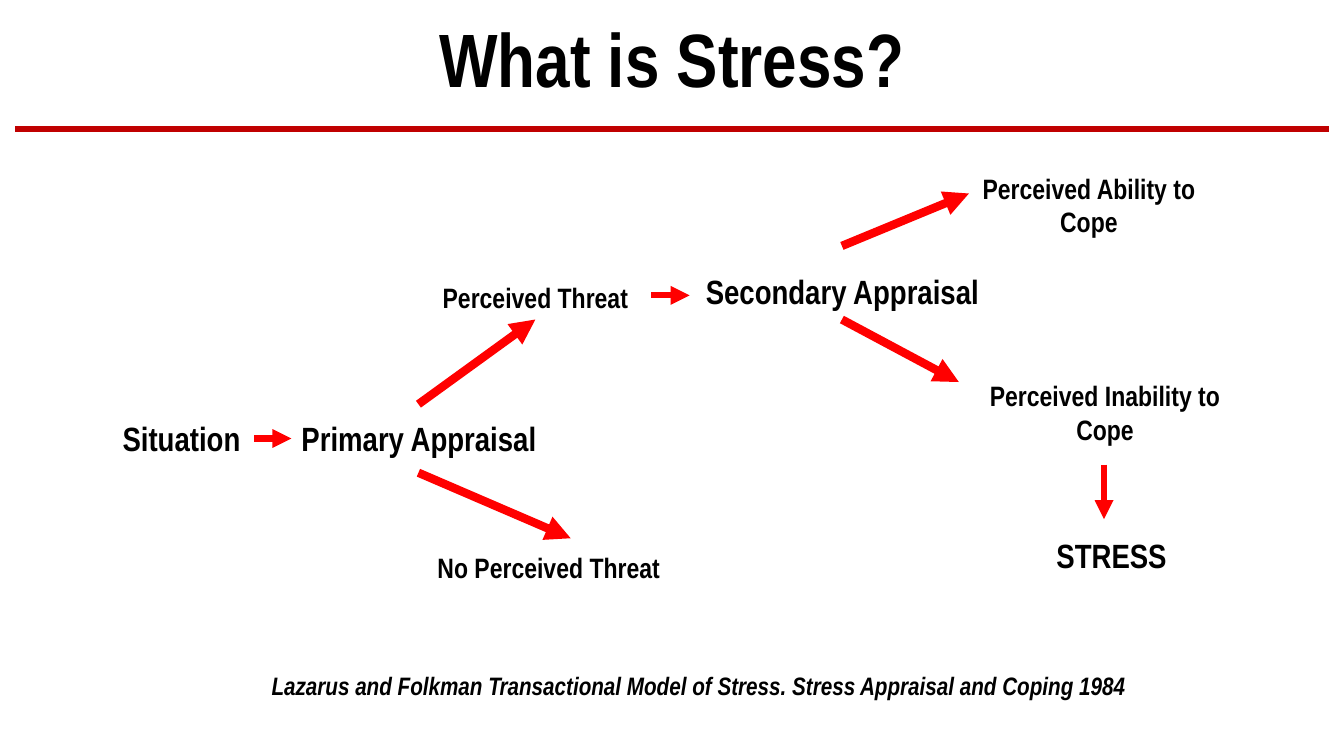
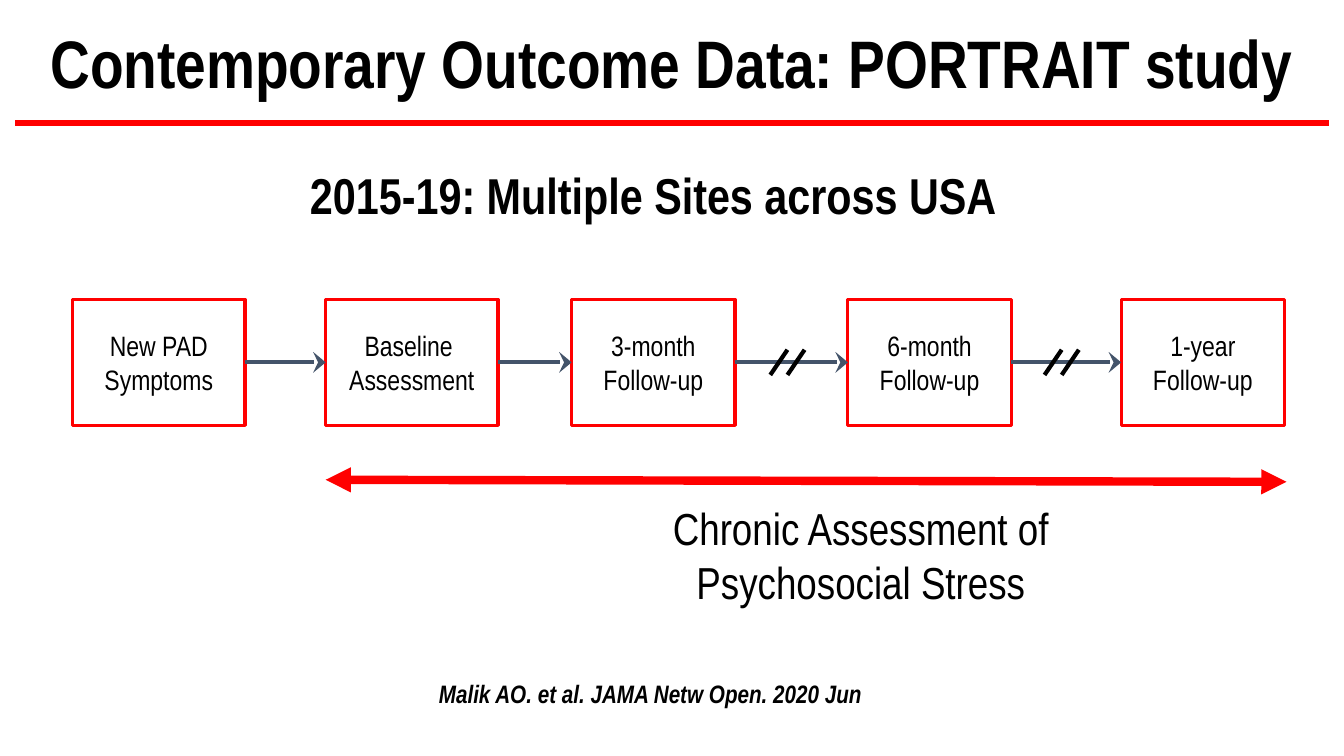
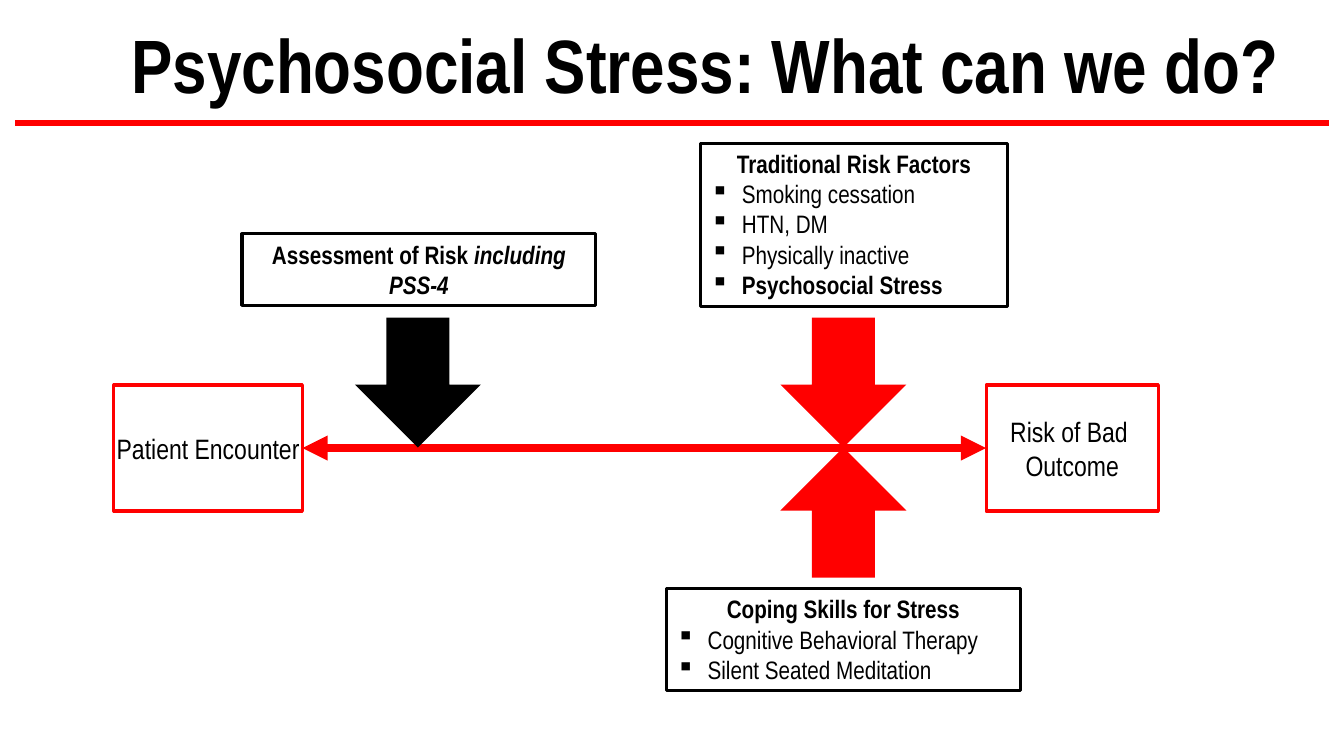
from dataclasses import dataclass

from pptx import Presentation, util as u
from pptx.dml.color import RGBColor
from pptx.enum import shapes, text
from pptx.oxml.ns import qn
from lxml import etree

PX = 9144  # EMU in one px: 100 px to the inch
MID, TOP, LOW = text.MSO_ANCHOR.MIDDLE, text.MSO_ANCHOR.TOP, text.MSO_ANCHOR.BOTTOM
LEFT, MIDST = text.PP_ALIGN.LEFT, text.PP_ALIGN.CENTER
KIND = shapes.MSO_SHAPE


@dataclass(frozen=True)
class Theme:
    font: str = "Arial Narrow"
    ink: str = "000000"
    paper: str = "FFFFFF"
    red: str = "FF0000"
    wine: str = "C00000"
    slate: str = "44546A"
    big: int = 54
    head: int = 48
    sub: int = 36
    lead: int = 32
    term: int = 24
    body: int = 20
    note: int = 18
    thick: float = 6
    rule: float = 4.5
    mid: float = 3
    edge: float = 2.25


T = Theme()

# Content of slide 1: text, place, size, alignment
TERMS = [
    ("Situation", (39, 410, 282, 50), T.term, MIDST),
    ("Primary Appraisal", (252, 410, 327, 50), T.term, MIDST),
    ("Perceived Threat", (390, 273, 282, 44), T.body, MIDST),
    ("No Perceived Threat", (424, 541, 309, 44), T.body, LEFT),
    ("Perceived Ability to Cope", (939, 165, 282, 77), T.body, MIDST),
    ("Perceived Inability to Cope", (961, 371, 270, 77), T.body, MIDST),
    ("Secondary Appraisal", (672, 264, 327, 50), T.term, MIDST),
    ("STRESS", (939, 526, 327, 50), T.term, MIDST),
]
STEPS = [(252, 435, 289, 435), (646, 293, 684, 293), (1095, 461, 1095, 515)]
FORKS = [(415, 401, 531, 317), (415, 469, 566, 534),
         (835, 244, 961, 192), (835, 317, 951, 379)]

# Content of slide 2: lines, left, width, long gap before
VISITS = [
    (["New PAD", "Symptoms"], 72, 171, False),
    (["Baseline ", "Assessment"], 323, 171, False),
    (["3-month", "Follow-up"], 567, 162, False),
    (["6-month", "Follow-up"], 841, 162, True),
    (["1-year", "Follow-up"], 1112, 162, True),
]

# Content of slide 3: heading runs, bullets, place
PANELS = [
    ([("Assessment of Risk ", "b"), ("including PSS-4", "bi")], [],
     (240, 232, 351, 71)),
    ([("Traditional Risk Factors", "b")],
     [("Smoking cessation", ""), ("HTN, DM", ""), ("Physically inactive", ""),
      ("Psychosocial Stress", "b")], (695, 142, 304, 162)),
    ([("Coping Skills for Stress", "b")],
     [("Cognitive Behavioral Therapy", ""), ("Silent Seated Meditation", "")],
     (661, 584, 351, 101)),
]
ENDS = [(["Patient Encounter"], (113, 382, 187, 125)),
        (["Risk of Bad ", "Outcome"], (978, 382, 171, 125))]
BLOCKS = [(KIND.DOWN_ARROW, 352, 315, T.ink),
          (KIND.DOWN_ARROW, 774, 315, T.red),
          (KIND.UP_ARROW, 774, 444, T.red)]


def emu(*nums):
    return [u.Emu(n * PX) for n in nums]


def rgb(code):
    return RGBColor.from_string(code)


def write(shape, paras, size=T.body, style="", align=MIDST, anchor=TOP,
          wrap=True, bullets=(), space=None):
    """Fill a shape with text; each paragraph is a string or a list of runs."""
    frame = shape.text_frame
    frame.auto_size = text.MSO_AUTO_SIZE.NONE
    frame.word_wrap, frame.vertical_anchor = wrap, anchor
    rows = [(p, False) for p in paras] + [([b], True) for b in bullets]
    for n, (runs, dot) in enumerate(rows):
        para = frame.add_paragraph() if n else frame.paragraphs[0]
        para.alignment = LEFT if dot else align
        if space:
            para.line_spacing = space
        if dot:
            props = para._p.get_or_add_pPr()
            props.set("marL", str(31 * PX))
            props.set("indent", str(-31 * PX))
            etree.SubElement(props, qn("a:buChar")).set("char", "▪")
        for words, look in [(runs, style)] if isinstance(runs, str) else runs:
            run = para.add_run()
            run.text = words
            font = run.font
            font.name, font.size = T.font, u.Pt(size)
            font.bold, font.italic = "b" in look, "i" in look
            font.color.rgb = rgb(T.ink)


def label(slide, words, place, **fmt):
    write(slide.shapes.add_textbox(*emu(*place)), [words], **fmt)


def block(slide, kind, place, fill, edge=None):
    shape = slide.shapes.add_shape(kind, *emu(*place))
    shape.shadow.inherit = False
    shape.fill.solid()
    shape.fill.fore_color.rgb = rgb(fill)
    if edge:
        shape.line.color.rgb = rgb(edge)
        shape.line.width = u.Pt(T.edge)
    else:
        shape.line.fill.background()
    return shape


def card(slide, lines, place):
    shape = block(slide, KIND.RECTANGLE, place, T.paper, T.red)
    write(shape, lines, anchor=MID, wrap=False)
    return shape


def line(slide, ends, color=T.red, width=T.thick, head=None, tail=None):
    link = slide.shapes.add_connector(shapes.MSO_CONNECTOR.STRAIGHT, *emu(*ends))
    link.line.color.rgb = rgb(color)
    link.line.width = u.Pt(width)
    props = link._element.spPr
    for tag, tip in (("a:headEnd", head), ("a:tailEnd", tail)):
        if tip:
            end = etree.SubElement(props.find(qn("a:ln")), qn(tag))
            end.set("type", tip)
            if tip == "stealth":
                end.set("w", "lg")
    etree.SubElement(props, qn("a:effectLst"))
    return link


def join(slide, left, right, **fmt):
    """Connect the right side of one card to the left side of the next."""
    link = line(slide, (0, 0, 0, 0), **fmt)
    link.begin_connect(left, 3)
    link.end_connect(right, 1)


def start(deck, title, place, size=T.big, rule=122, color=T.red):
    """Add a slide with the shared title and rule."""
    slide = deck.slides.add_slide(deck.slide_layouts[5])
    head = slide.shapes.title
    head.left, head.top, head.width, head.height = emu(*place)
    write(head, [title], size=size, style="b", anchor=LOW, space=0.9)
    line(slide, (15, rule, 1318, rule), color, T.rule)
    return slide


def model(deck):
    slide = start(deck, "What is Stress?", (0, 14, 1333, 94),
                  rule=128, color=T.wine)
    for words, place, size, align in TERMS:
        label(slide, words, place, size=size, style="b", align=align)
    for group, width in ((STEPS, T.rule), (FORKS, T.thick)):
        for ends in group:
            line(slide, ends, width=width, tail="triangle")
    label(slide, "Lazarus and Folkman Transactional Model of Stress. "
          "Stress Appraisal and Coping 1984 ", (216, 660, 960, 40),
          size=T.note, style="bi")


def study(deck):
    slide = start(deck, "Contemporary Outcome Data: PORTRAIT study",
                  (0, 9, 1333, 98), size=T.head)
    label(slide, "2015-19: Multiple Sites across USA", (154, 158, 988, 71),
          size=T.sub, style="b")
    # Visits, their links and the break marks on long gaps
    last, edge = None, 0
    for lines, left, width, gap in VISITS:
        visit = card(slide, lines, (left, 297, width, 125))
        if last:
            join(slide, last, visit, color=T.slate, width=T.mid, tail="stealth")
        if gap:
            mid = (edge + left) // 2 - 4
            for x in (mid, mid + 17):
                line(slide, (x, 347, x - 17, 372), T.ink, T.mid)
        last, edge = visit, left + width
    line(slide, (323, 476, 1276, 478), head="triangle", tail="triangle")
    label(slide, "Chronic Assessment of Psychosocial Stress",
          (552, 492, 604, 118), size=T.lead)
    label(slide, "Malik AO. et al. JAMA Netw Open. 2020 Jun ",
          (168, 668, 960, 40), size=T.note, style="bi")


def action(deck):
    slide = start(deck, "Psychosocial Stress: What can we do?",
                  (66, 21, 1267, 93))
    left, right = [card(slide, *end) for end in ENDS]
    join(slide, left, right, head="triangle", tail="triangle")
    for kind, x, y, fill in BLOCKS:
        block(slide, kind, (x, y, 125, 129), fill)
    for head, bullets, place in PANELS:
        panel = block(slide, KIND.RECTANGLE, place, T.paper, T.ink)
        write(panel, [head], size=T.note, bullets=bullets)


def main():
    deck = Presentation()
    deck.slide_width, deck.slide_height = emu(1333, 750)
    for build in (model, study, action):
        build(deck)
    deck.save("out.pptx")


if __name__ == "__main__":
    main()
